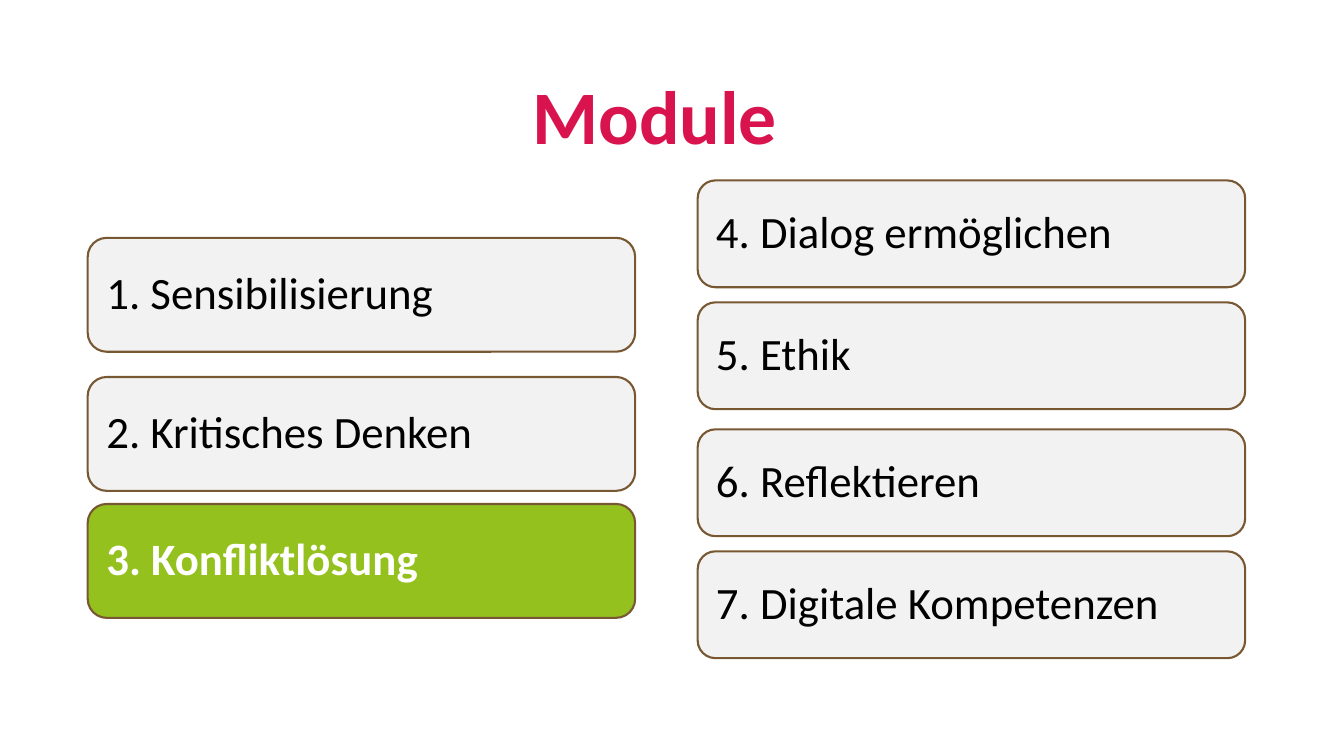
import pptx
import pptx.dml.color
import pptx.enum.shapes
import pptx.enum.text
import pptx.util

Inches = pptx.util.Inches
ALIGN = pptx.enum.text.PP_ALIGN
ANCHOR = pptx.enum.text.MSO_ANCHOR

COLORS = {
    "title": "D8134D",
    "outline": "785832",
    "module": "F2F2F2",
    "current": "95C11F",
    "text": "000000",
    "current_text": "FFFFFF",
}
TITLE = "Module"
CURRENT_MODULE = "3. Konfliktlösung"
COLUMNS = [
    {
        "left": 0.87,
        "height": 1.13,
        "modules": [
            ("1. Sensibilisierung", 2.36),
            ("2. Kritisches Denken", 3.74),
            (CURRENT_MODULE, 5),
        ],
    },
    {
        "left": 6.92,
        "height": 1.06,
        "modules": [
            ("4. Dialog ermöglichen", 1.79),
            ("5. Ethik", 3),
            ("6. Reflektieren", 4.26),
            ("7. Digitale Kompetenzen", 5.47),
        ],
    },
]
MODULE_WIDTH = 5.43
TITLE_FONT = {"name": "Calibri", "size": pptx.util.Pt(54), "bold": True}
MODULE_FONT = {"name": "Calibri", "size": pptx.util.Pt(32)}
TITLE_FRAME = {
    "word_wrap": True,
    "auto_size": pptx.enum.text.MSO_AUTO_SIZE.NONE,
    "vertical_anchor": ANCHOR.BOTTOM,
}
MODULE_FRAME = {
    "word_wrap": True,
    "vertical_anchor": ANCHOR.MIDDLE,
    "margin_left": Inches(0.13),
    "margin_right": Inches(0.13),
    "margin_top": Inches(0.13),
    "margin_bottom": Inches(0.13),
}


def rgb(name):
    return pptx.dml.color.RGBColor.from_string(COLORS[name])


def apply(target, values):
    for name, value in values.items():
        setattr(target, name, value)


def write_text(shape, text, frame_format, font_format, color, alignment):
    apply(shape.text_frame, frame_format)
    paragraph = shape.text_frame.paragraphs[0]
    paragraph.text = text
    apply(paragraph, {"alignment": alignment, "line_spacing": 0.9})
    font = paragraph.runs[0].font
    apply(font, font_format)
    font.color.rgb = rgb(color)


def add_module(slide, text, left, top, height):
    current = text == CURRENT_MODULE
    shape = slide.shapes.add_shape(
        pptx.enum.shapes.MSO_SHAPE.ROUNDED_RECTANGLE,
        Inches(left), Inches(top), Inches(MODULE_WIDTH), Inches(height),
    )
    shape.shadow.inherit = False
    shape.fill.solid()
    shape.fill.fore_color.rgb = rgb("current" if current else "module")
    shape.line.color.rgb = rgb("outline")
    shape.line.width = pptx.util.Pt(1.5)
    write_text(
        shape, text, MODULE_FRAME, {**MODULE_FONT, "bold": current},
        "current_text" if current else "text", ALIGN.LEFT,
    )


def main():
    presentation = pptx.Presentation()
    presentation.slide_width = Inches(13.33)
    presentation.slide_height = Inches(7.5)
    slide = presentation.slides.add_slide(presentation.slide_layouts[5])
    title = slide.shapes.title
    apply(title, {
        "left": Inches(0.01),
        "top": Inches(-0.3),
        "width": Inches(12.97),
        "height": Inches(1.95),
    })
    write_text(title, TITLE, TITLE_FRAME, TITLE_FONT, "title", ALIGN.CENTER)
    for column in COLUMNS:
        for text, top in column["modules"]:
            add_module(slide, text, column["left"], top, column["height"])
    presentation.save("out.pptx")


if __name__ == "__main__":
    main()
